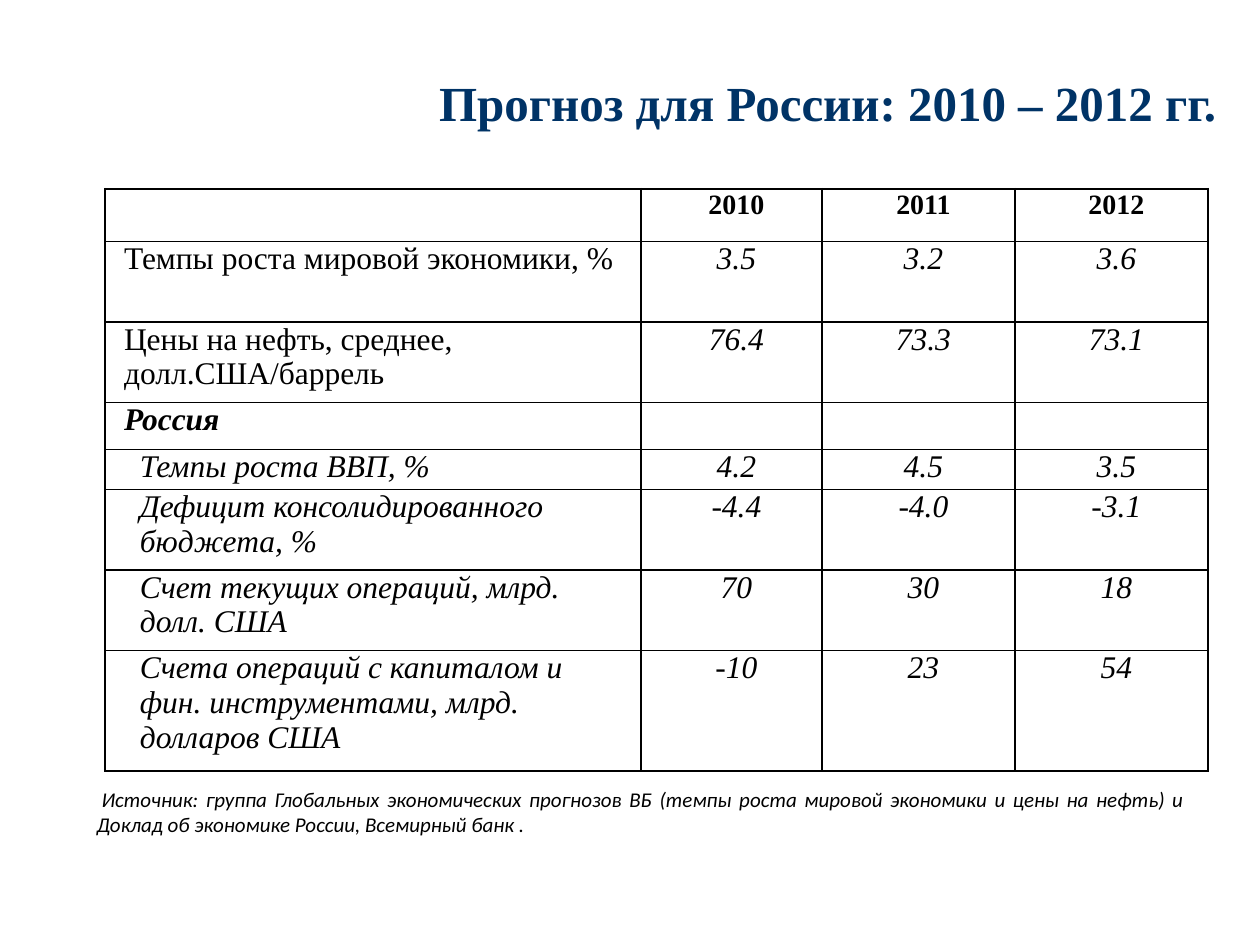
from lxml import etree
from pptx import Presentation
from pptx.dml.color import RGBColor
from pptx.enum.text import MSO_ANCHOR, PP_ALIGN
from pptx.oxml.ns import qn
from pptx.util import Cm, Pt

NAVY = RGBColor(0x00, 0x33, 0x66)
BLACK = RGBColor(0x00, 0x00, 0x00)
LEFT, CENTER, RIGHT, JUSTIFY = PP_ALIGN.LEFT, PP_ALIGN.CENTER, PP_ALIGN.RIGHT, PP_ALIGN.JUSTIFY
BOTTOM, MIDDLE = MSO_ANCHOR.BOTTOM, MSO_ANCHOR.MIDDLE
SERIF = "Times New Roman"
SANS = "Calibri"
TITLE_ONLY = 5

CELL_INDENT = Cm(0.2)
SUBITEM_INDENT = Cm(0.52)
COLUMN_WIDTHS = (10.8, 3.65, 3.89, 3.89)
ROW_HEIGHTS = (1.06, 1.62, 1.62, 0.95, 0.81, 1.62, 1.62, 2.43)
SECTION = "Россия"
FORECAST = (
    ("", "2010", "2011", "2012"),
    ("Темпы роста мировой экономики, %", "3.5", "3.2", "3.6"),
    ("Цены на нефть, среднее, долл.США/баррель", "76.4", "73.3", "73.1"),
    (SECTION, "", "", ""),
    ("Темпы роста ВВП, %", "4.2", "4.5", "3.5"),
    ("Дефицит консолидированного\nбюджета, %", "-4.4", "-4.0", "-3.1"),
    ("Счет текущих операций, млрд.\nдолл. США", "70", "30", "18"),
    ("Счета операций с капиталом и\nфин. инструментами, млрд.\nдолларов США", "-10", "23", "54"),
)


def format_text(text_frame, font_name, size, color, alignment, bold=False, italic=False):
    """Apply one format to all paragraphs of a text frame."""
    for paragraph in text_frame.paragraphs:
        paragraph.alignment = alignment
        font = paragraph.font
        for target in [font] + [run.font for run in paragraph.runs]:
            target.name = font_name
            target.size = Pt(size)
            target.bold = bold
            target.italic = italic
            target.color.rgb = color


def set_indent(text_frame, margin, first_line=0):
    """Set the left margin and first-line indent of all paragraphs."""
    for paragraph in text_frame.paragraphs:
        properties = paragraph._p.get_or_add_pPr()
        properties.set("marL", str(int(margin)))
        properties.set("indent", str(int(first_line)))


def set_borders(cell, top, bottom):
    """Draw black lines on the four sides of a cell."""
    properties = cell._tc.get_or_add_tcPr()
    for side, width in (("L", 1), ("R", 1), ("T", top), ("B", bottom)):
        line = etree.SubElement(properties, qn(f"a:ln{side}"), w=str(int(Pt(width))))
        fill = etree.SubElement(line, qn("a:solidFill"))
        etree.SubElement(fill, qn("a:srgbClr"), val=str(BLACK))


def add_title(slide, text):
    """Fill and place the title placeholder."""
    title = slide.shapes.title
    title.left, title.top, title.width, title.height = Cm(4.45), Cm(0.43), Cm(20.32), Cm(2.34)
    text_frame = title.text_frame
    text_frame.text = text
    text_frame.vertical_anchor = BOTTOM
    format_text(text_frame, SERIF, 28, NAVY, RIGHT, bold=True)


def fill_cell(cell, text, row, column):
    """Write and format one cell according to its place in the table."""
    section = FORECAST.index((SECTION, "", "", ""))
    header = row == 0
    label = column == 0
    cell.margin_left = cell.margin_right = Cm(0.18)
    cell.margin_top = cell.margin_bottom = 0
    cell.text_frame.text = text
    set_indent(cell.text_frame, SUBITEM_INDENT if label and row > section else CELL_INDENT)
    format_text(
        cell.text_frame, SERIF, 16 if header else 18, BLACK, LEFT if label else CENTER,
        bold=header or row == section,
        italic=not header and (not label or row >= section),
    )
    set_borders(cell, 1.5 if header else 1, 1.5 if row == len(FORECAST) - 1 else 1)
    cell.fill.background()


def add_forecast_table(slide):
    """Add the table of forecast figures."""
    frame = slide.shapes.add_table(
        len(ROW_HEIGHTS), len(COLUMN_WIDTHS), Cm(2.12), Cm(3.81),
        Cm(sum(COLUMN_WIDTHS)), Cm(sum(ROW_HEIGHTS)),
    )
    table = frame.table
    table.first_row = table.horz_banding = False
    for column, width in zip(table.columns, COLUMN_WIDTHS):
        column.width = Cm(width)
    for row, height in zip(table.rows, ROW_HEIGHTS):
        row.height = Cm(height)
    for row, values in enumerate(FORECAST):
        for column, text in enumerate(values):
            fill_cell(table.cell(row, column), text, row, column)


def add_source_note(slide, text):
    """Add the justified source note under the table."""
    text_frame = slide.shapes.add_textbox(Cm(1.7), Cm(15.72), Cm(22.43), Cm(1.27)).text_frame
    text_frame.word_wrap = True
    text_frame.vertical_anchor = MIDDLE
    text_frame.text = text
    set_indent(text_frame, 0, Cm(0.1))
    format_text(text_frame, SANS, 12, BLACK, JUSTIFY, italic=True)


def main():
    """Build and save the slide."""
    presentation = Presentation()
    presentation.slide_width, presentation.slide_height = Cm(25.4), Cm(19.05)
    slide = presentation.slides.add_slide(presentation.slide_layouts[TITLE_ONLY])
    add_title(slide, "Прогноз для России: 2010 – 2012 гг.")
    add_forecast_table(slide)
    add_source_note(
        slide,
        "Источник: группа Глобальных экономических прогнозов ВБ (темпы роста мировой "
        "экономики и цены на нефть) и Доклад об экономике России, Всемирный банк .",
    )
    presentation.save("out.pptx")


if __name__ == "__main__":
    main()
